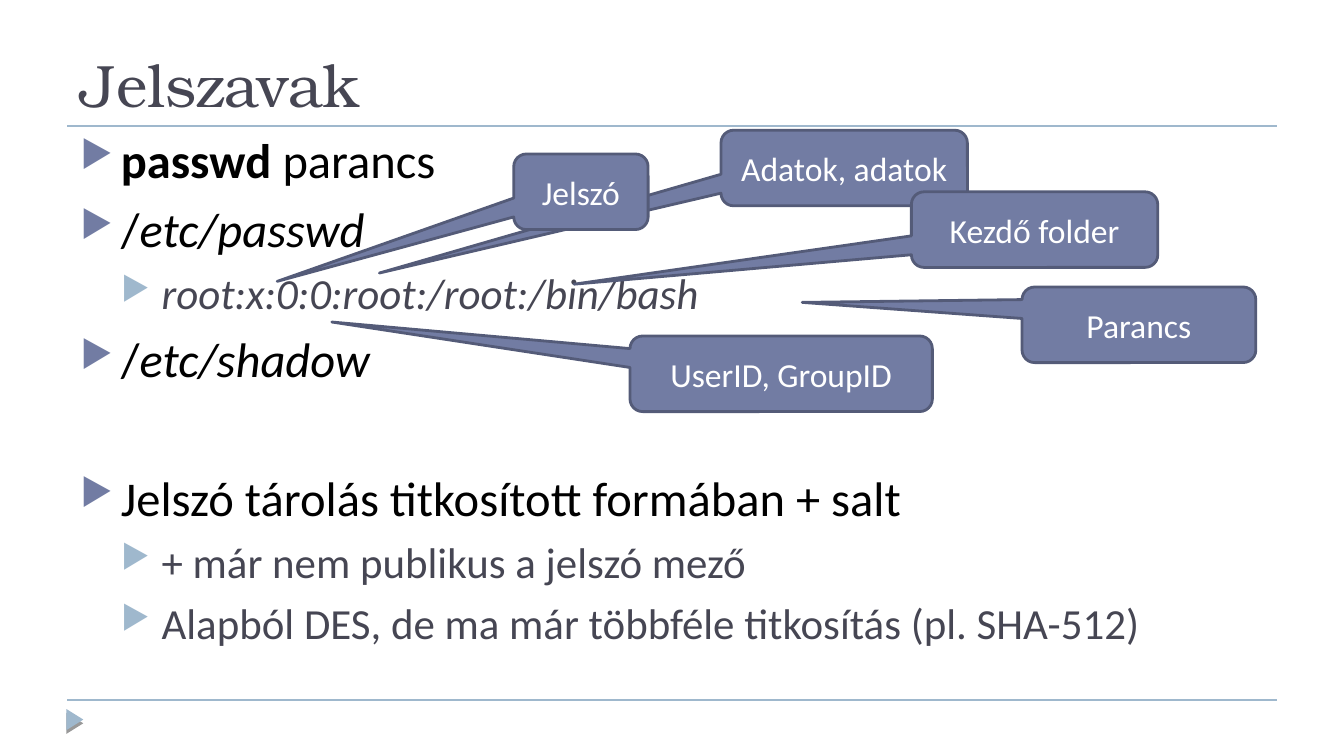
from lxml import etree
from pptx import Presentation
from pptx import util as u
from pptx.dml.color import RGBColor
from pptx.enum import shapes, text
from pptx.oxml import ns

PX = 9525
COLORS = {
    "title": "464653", "body": "000000", "accent": "727CA3", "rule": "9FB8CD",
    "edge": "545B78", "label": "FFFFFF", "shadow": "000000",
}
LEVELS = [
    {"size": 26, "color": "body", "bullet": "accent", "before": 6},
    {"size": 23, "color": "title", "bullet": "rule", "before": 5},
]


def rgb(name):
    return RGBColor.from_string(COLORS[name])


def add_xml(parent, tag, **attributes):
    return etree.SubElement(parent, ns.qn(tag), attributes)


class SlideBuilder:
    font = "Calibri"
    title_font = "TeX Gyre Bonum"
    bullet_font = "OpenSymbol"
    indent = 29

    def __init__(self, slide):
        self.shapes = slide.shapes

    def style(self, font, size, color, name=None):
        font.name = name or self.font
        font.size = u.Pt(size)
        font.color.rgb = rgb(color)

    def rule(self, left, right, y):
        line = self.shapes.add_connector(
            shapes.MSO_CONNECTOR.STRAIGHT, left * PX, y * PX, right * PX, y * PX)
        line.line.color.rgb = rgb("rule")
        line.line.width = u.Pt(0.75)
        add_xml(line._element.spPr, "a:effectLst")

    def marker(self, *box):
        marker = self.shapes.add_shape(
            shapes.MSO_SHAPE.ISOSCELES_TRIANGLE, *(n * PX for n in box))
        marker.rotation = 90
        marker.fill.solid()
        marker.fill.fore_color.rgb = rgb("rule")
        marker.line.fill.background()
        marker.shadow.inherit = False
        effects = marker._element.spPr.find(ns.qn("a:effectLst"))
        shadow = add_xml(effects, "a:outerShdw", blurRad="0", dist=str(u.Pt(2)),
                         dir="5400000", rotWithShape="0")
        color = add_xml(shadow, "a:srgbClr", val=COLORS["shadow"])
        add_xml(color, "a:alpha", val="40000")

    def text_frame(self, *box):
        frame = self.shapes.add_textbox(*(n * PX for n in box)).text_frame
        frame.word_wrap = True
        return frame

    def title(self, words, *box):
        frame = self.text_frame(*box)
        frame.vertical_anchor = text.MSO_ANCHOR.BOTTOM
        heading = frame.paragraphs[0]
        heading.text = words
        self.style(heading.font, 32, "title", self.title_font)

    def bullets(self, items, *box):
        frame = self.text_frame(*box)
        for index, (level, gap, runs) in enumerate(items):
            item = frame.add_paragraph() if index else frame.paragraphs[0]
            look = LEVELS[level]
            item.level = level
            item.space_before = u.Pt(look["before"] + gap)
            props = item._p.get_or_add_pPr()
            props.set("marL", str(self.indent * (level + 1) * PX))
            props.set("indent", str(-self.indent * PX))
            color = add_xml(props, "a:buClr")
            add_xml(color, "a:srgbClr", val=COLORS[look["bullet"]])
            add_xml(props, "a:buSzPct", val="76000")
            add_xml(props, "a:buFont", typeface=self.bullet_font)
            add_xml(props, "a:buChar", char="▶")
            self.style(item.font, look["size"], look["color"])
            for words, emphasis in runs:
                run = item.add_run()
                run.text = words
                if emphasis == "bold":
                    run.font.bold = True
                elif emphasis == "italic":
                    run.font.italic = True

    def callout(self, words, left, top, width, height, tip):
        callout = self.shapes.add_shape(
            shapes.MSO_SHAPE.ROUNDED_RECTANGULAR_CALLOUT,
            left * PX, top * PX, width * PX, height * PX)
        callout.adjustments[0] = (tip[0] - left) / width - 0.5
        callout.adjustments[1] = (tip[1] - top) / height - 0.5
        callout.shadow.inherit = False
        callout.fill.solid()
        callout.fill.fore_color.rgb = rgb("accent")
        callout.line.color.rgb = rgb("edge")
        callout.line.width = u.Pt(1.5)
        frame = callout.text_frame
        frame.word_wrap = True
        frame.vertical_anchor = text.MSO_ANCHOR.MIDDLE
        label = frame.paragraphs[0]
        label.text = words
        label.alignment = text.PP_ALIGN.CENTER
        self.style(label.font, 18, "label")


def main():
    deck = Presentation()
    deck.slide_width = 960 * PX
    deck.slide_height = 540 * PX
    page = SlideBuilder(deck.slides.add_slide(deck.slide_layouts[6]))

    for y in (500, 90):
        page.rule(48, 912, y)
    page.marker(46, 508, 15, 12)
    page.title("Jelszavak", 48, 12, 864, 78)

    topics = [
        (0, 0, [("passwd ", "bold"), ("parancs", None)]),
        (0, 0, [("/", None), ("etc/passwd", "italic")]),
        (1, 0, [("root:x:0:0:root:/root:/bin/bash", "italic")]),
        (0, 0, [("/", None), ("etc/shadow", "italic")]),
        (0, 37, [("Jelszó tárolás titkosított formában + salt", None)]),
        (1, 0, [("+ már nem publikus a jelszó mező", None)]),
        (1, 0, [("Alapból DES, de ma már többféle titkosítás (pl. SHA-512)", None)]),
    ]
    page.bullets(topics, 48, 88, 864, 389)

    fields = [
        ("Adatok, adatok", 515, 93, 176, (271, 195)),
        ("Jelszó", 367, 110, 96, (198, 201)),
        ("Kezdő folder", 651, 137, 176, (410, 203)),
        ("Parancs", 730, 205, 167, (573, 216)),
        ("UserID, GroupID", 450, 240, 216, (237, 230)),
    ]
    for words, left, top, width, tip in fields:
        page.callout(words, left, top, width, 54, tip)

    deck.save("out.pptx")


if __name__ == "__main__":
    main()
